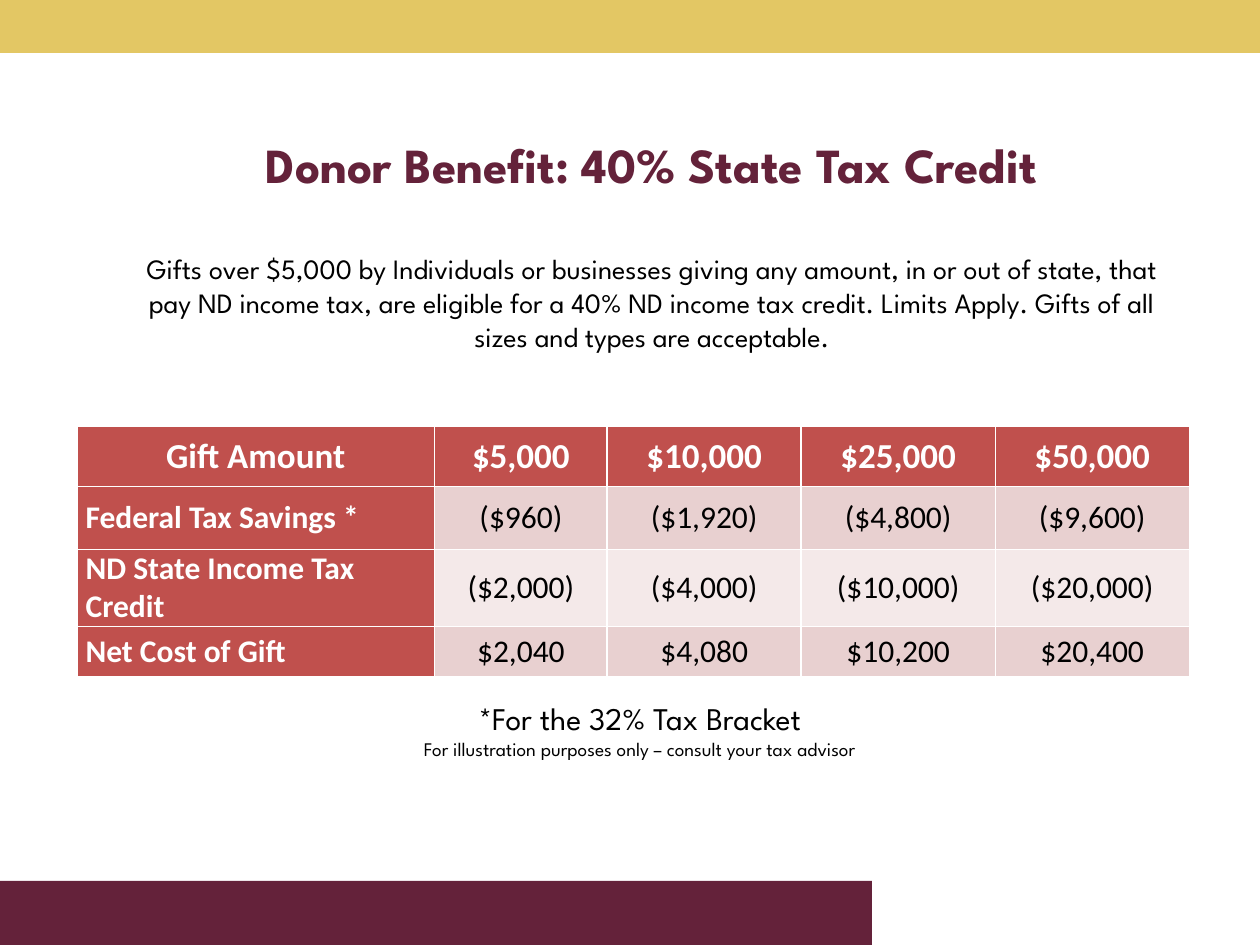
import pptx
import pptx.dml.color
import pptx.enum.shapes
import pptx.enum.text
import pptx.oxml.ns
import pptx.util
from lxml import etree

RGBColor = pptx.dml.color.RGBColor
ALIGN = pptx.enum.text.PP_ALIGN
ANCHOR = pptx.enum.text.MSO_ANCHOR

GOLD = RGBColor(0xE3, 0xC7, 0x64)
MAROON = RGBColor(0x64, 0x22, 0x3A)
RED = RGBColor(0xC0, 0x50, 0x4D)
ROSE = RGBColor(0xE8, 0xD0, 0xD0)
PALE_ROSE = RGBColor(0xF4, 0xE9, 0xE9)
BLACK = RGBColor(0, 0, 0)
WHITE = RGBColor(0xFF, 0xFF, 0xFF)

DISPLAY_FONT = "League Spartan"
TABLE_FONT = "Calibri"
COLUMNS, ROWS = 10, 7.5  # grid units, one inch each

GIFT_TABLE = [
    ["Gift Amount", "$5,000", "$10,000", "$25,000", "$50,000"],
    ["Federal Tax Savings *", "($960)", "($1,920)", "($4,800)", "($9,600)"],
    ["ND State Income Tax Credit", "($2,000)", "($4,000)", "($10,000)", "($20,000)"],
    ["Net Cost of Gift", "$2,040", "$4,080", "$10,200", "$20,400"],
]


def write(paragraph, text, size=18, font=DISPLAY_FONT, color=BLACK, bold=False,
          align=ALIGN.CENTER):
    paragraph.text = text
    paragraph.alignment = align
    paragraph.space_before = pptx.util.Pt(0)
    paragraph.font.size = pptx.util.Pt(size)
    paragraph.font.name = font
    paragraph.font.bold = bold
    paragraph.font.color.rgb = color


class SlideBuilder:
    def __init__(self, presentation):
        self.cell = pptx.util.Inches(1)
        presentation.slide_width = self.cell * COLUMNS
        presentation.slide_height = int(self.cell * ROWS)
        self.slide = presentation.slides.add_slide(presentation.slide_layouts[1])

    def units(self, *lengths):
        return [round(length * self.cell) for length in lengths]

    def bar(self, area, color):
        shape = self.slide.shapes.add_shape(
            pptx.enum.shapes.MSO_SHAPE.RECTANGLE, *self.units(*area))
        shape.shadow.inherit = False
        shape.fill.solid()
        shape.fill.fore_color.rgb = color
        shape.line.fill.background()

    def placeholder(self, index, area, text, indent=0, **text_format):
        """Move a template placeholder and fill it with one unbulleted paragraph."""
        shape = self.slide.placeholders[index]
        shape.left, shape.top, shape.width, shape.height = self.units(*area)
        frame = shape.text_frame
        frame.auto_size = pptx.enum.text.MSO_AUTO_SIZE.NONE
        frame.vertical_anchor = ANCHOR.TOP
        properties = frame.paragraphs[0]._p.get_or_add_pPr()
        properties.set("marL", str(self.units(indent)[0]))
        properties.set("indent", "0")
        etree.SubElement(properties, pptx.oxml.ns.qn("a:buNone"))
        write(frame.paragraphs[0], text, **text_format)

    def text_box(self, area, lines):
        """Add a text box from (text, size) lines."""
        frame = self.slide.shapes.add_textbox(*self.units(*area)).text_frame
        frame.word_wrap = True
        for number, (text, size) in enumerate(lines):
            paragraph = frame.add_paragraph() if number else frame.paragraphs[0]
            write(paragraph, text, size=size)

    def table(self, left, top, widths, heights, rows):
        area = self.units(left, top, sum(widths), sum(heights))
        table = self.slide.shapes.add_table(len(heights), len(widths), *area).table
        table.first_col = True
        for column, width in zip(table.columns, self.units(*widths)):
            column.width = width
        for row, height in zip(table.rows, self.units(*heights)):
            row.height = height
        for row_number, row in enumerate(rows):
            for column_number, text in enumerate(row):
                self.table_cell(table, row_number, column_number, text)

    def table_cell(self, table, row, column, text):
        cell = table.cell(row, column)
        heading = row == 0 or column == 0
        cell.vertical_anchor = ANCHOR.MIDDLE
        cell.margin_left, cell.margin_right = self.units(0.07, 0.07)
        cell.margin_top = cell.margin_bottom = 0
        cell.fill.solid()
        cell.fill.fore_color.rgb = RED if heading else ROSE if row % 2 else PALE_ROSE
        write(cell.text_frame.paragraphs[0], text, font=TABLE_FONT,
              size=18 if row else 20, bold=heading,
              color=WHITE if heading else BLACK,
              align=ALIGN.LEFT if row and column == 0 else ALIGN.CENTER)


def main():
    presentation = pptx.Presentation()
    builder = SlideBuilder(presentation)
    builder.bar((0, 0, COLUMNS, 0.42), GOLD)
    builder.bar((0, ROWS - 0.51, 6.92, 0.51), MAROON)
    builder.placeholder(0, (0.67, 1.02, 9, 0.8), "Donor Benefit: 40% State Tax Credit",
                        size=28, color=MAROON, bold=True)
    builder.placeholder(
        1, (0.42, 1.95, 9.01, 0.91),
        "Gifts over $5,000 by Individuals or businesses giving any amount, in or out of "
        "state, that pay ND income tax, are eligible for a 40% ND income tax credit. "
        "Limits Apply. Gifts of all sizes and types are acceptable.",
        indent=0.5, size=16)
    builder.table(0.61, 3.38, [2.84, 1.37] + [1.54] * 3, [0.48, 0.5, 0.5, 0.4], GIFT_TABLE)
    builder.text_box((2.83, 5.5, 4.5, 0.59), [
        ("*For the 32% Tax Bracket", 18),
        ("For illustration purposes only – consult your tax advisor", 11),
    ])
    presentation.save("out.pptx")


if __name__ == "__main__":
    main()
